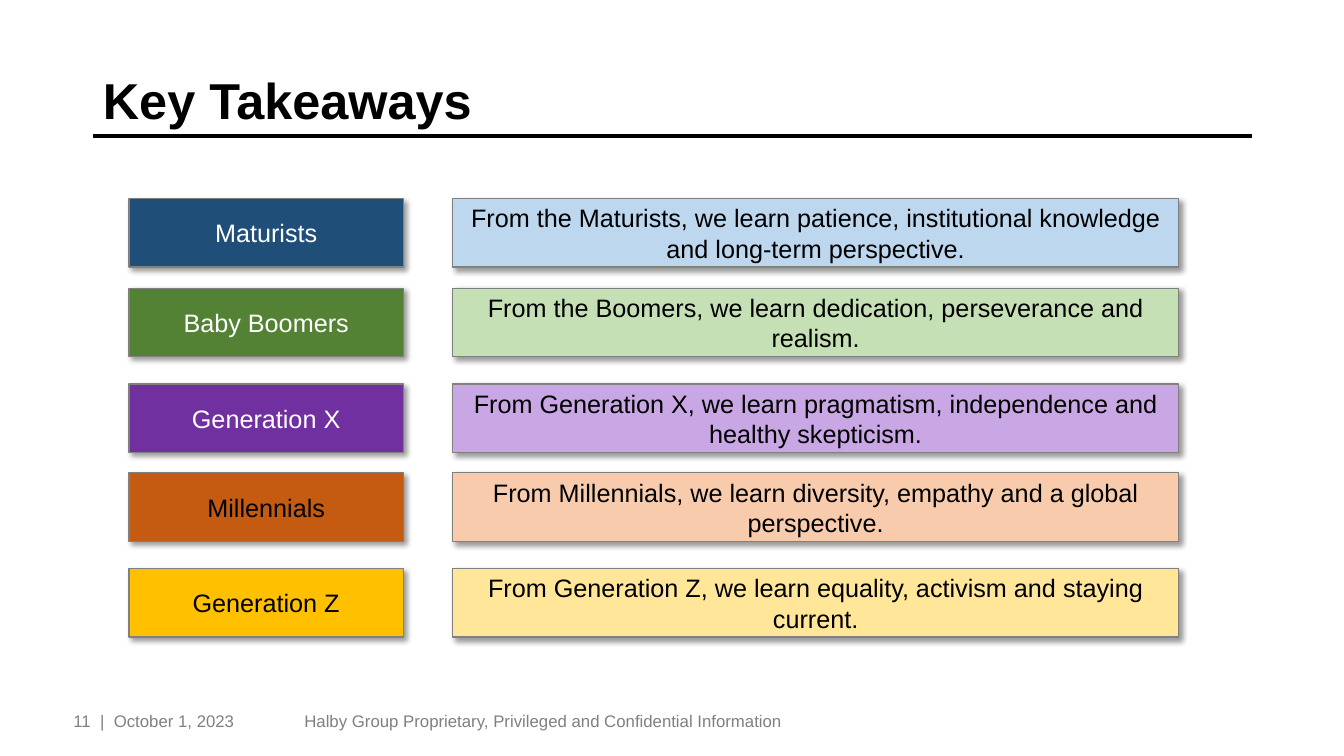
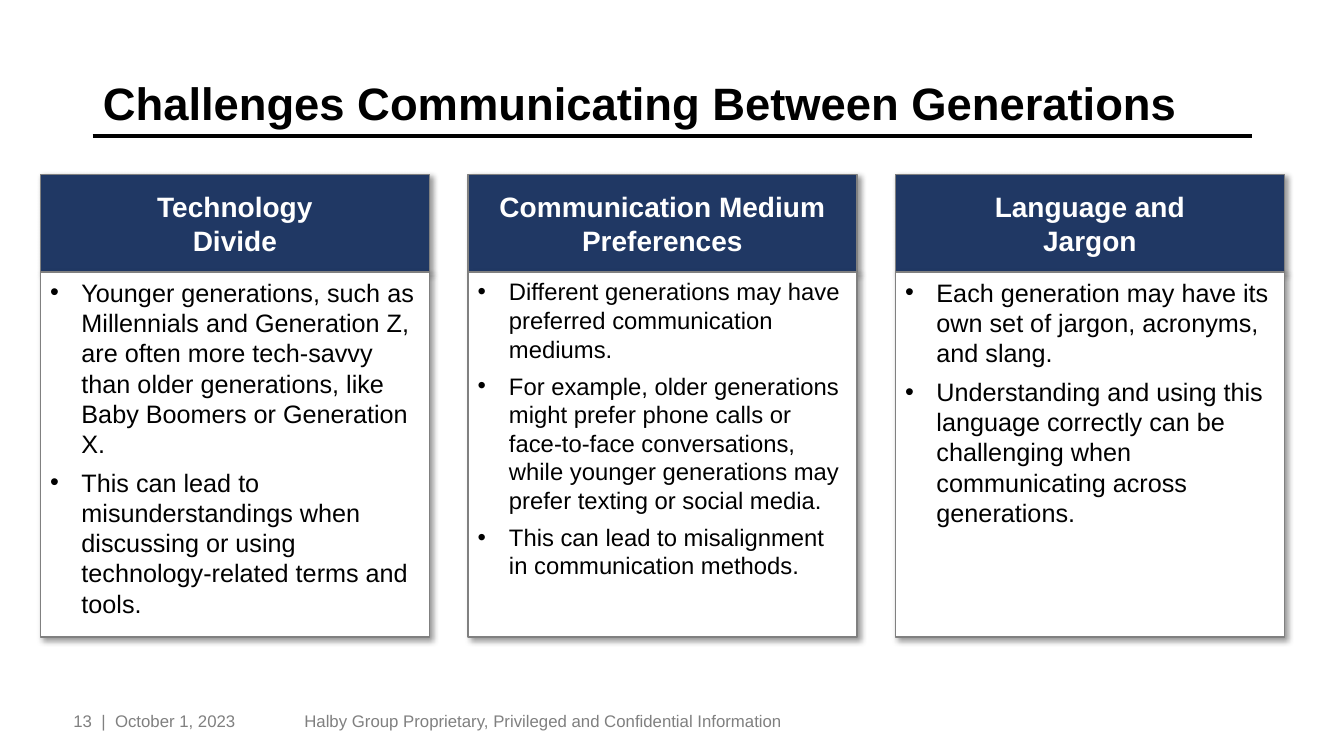
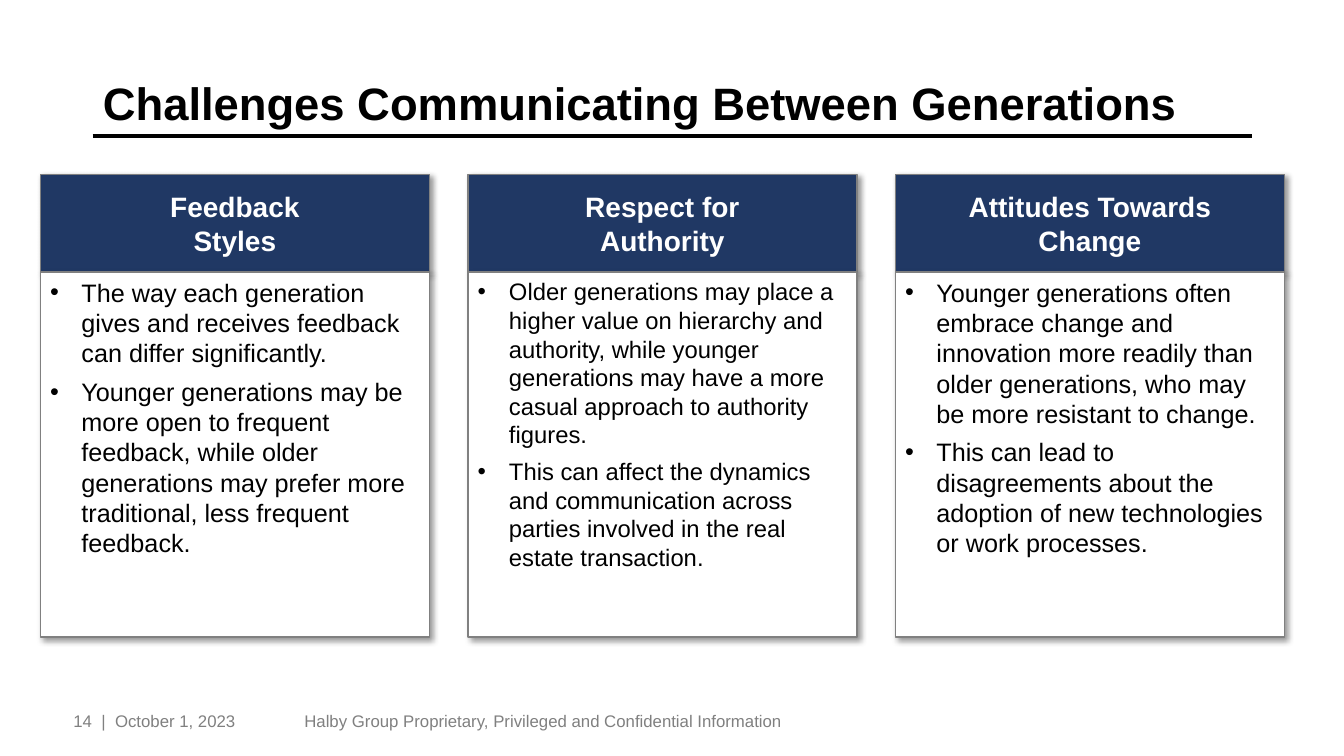
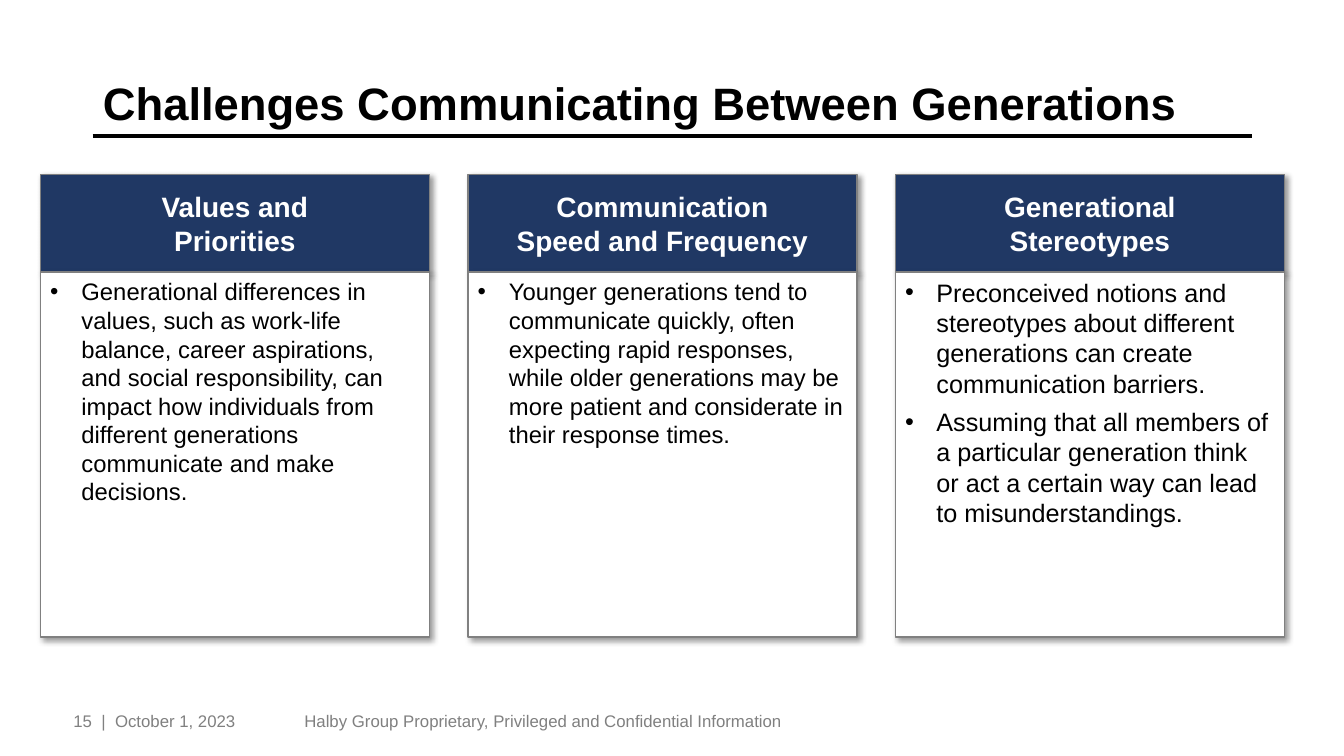
from lxml.etree import SubElement
from pptx import Presentation
from pptx.dml.color import RGBColor
from pptx.enum.shapes import MSO_CONNECTOR, MSO_SHAPE
from pptx.enum.text import MSO_ANCHOR, MSO_AUTO_SIZE, PP_ALIGN
from pptx.oxml.ns import qn
from pptx.util import Pt

PX = 9144  # EMU in one px, 100 px to the inch
FONT = "Arial"
INDENT = 31

BLACK = RGBColor(0x00, 0x00, 0x00)
WHITE = RGBColor(0xFF, 0xFF, 0xFF)
GRAY = RGBColor(0x80, 0x80, 0x80)
NAVY = RGBColor(0x20, 0x38, 0x64)
BLUE = RGBColor(0x1F, 0x4E, 0x79)
SKY = RGBColor(0xBD, 0xD7, 0xEE)
GREEN = RGBColor(0x54, 0x82, 0x35)
MINT = RGBColor(0xC5, 0xE0, 0xB4)
PURPLE = RGBColor(0x70, 0x30, 0xA0)
LILAC = RGBColor(0xC9, 0xA6, 0xE4)
RUST = RGBColor(0xC5, 0x5A, 0x11)
PEACH = RGBColor(0xF8, 0xCB, 0xAD)
GOLD = RGBColor(0xFF, 0xC0, 0x00)
CREAM = RGBColor(0xFF, 0xE6, 0x99)

DATE = "October 1, 2023"
NOTICE = "Halby Group Proprietary, Privileged and Confidential Information"
TOPIC = "Challenges Communicating Between Generations"

# top, name, name fill, name colour, lesson, lesson fill
LESSONS = [
    (197, "Maturists", BLUE, WHITE,
     "From the Maturists, we learn patience, institutional knowledge and "
     "long-term perspective.", SKY),
    (286, "Baby Boomers", GREEN, WHITE,
     "From the Boomers, we learn dedication, perseverance and realism.", MINT),
    (381, "Generation X", PURPLE, WHITE,
     "From Generation X, we learn pragmatism, independence and healthy "
     "skepticism.", LILAC),
    (469, "Millennials", RUST, BLACK,
     "From Millennials, we learn diversity, empathy and a global "
     "perspective.", PEACH),
    (564, "Generation Z", GOLD, BLACK,
     "From Generation Z, we learn equality, activism and staying current.",
     CREAM),
]

# page number, then three cards: heading, text size, points
BOARDS = [
    (13, [
        ("Technology\nDivide", 18, [
            "Younger generations, such as Millennials and Generation Z, are "
            "often more tech-savvy than older generations, like Baby Boomers "
            "or Generation X.",
            "This can lead to misunderstandings when discussing or using "
            "technology-related terms and tools."]),
        ("Communication Medium Preferences", 17, [
            "Different generations may have preferred communication mediums.",
            "For example, older generations might prefer phone calls or "
            "face-to-face conversations, while younger generations may prefer "
            "texting or social media.",
            "This can lead to misalignment in communication methods."]),
        ("Language and\nJargon", 18, [
            "Each generation may have its own set of jargon, acronyms, and "
            "slang.",
            "Understanding and using this language correctly can be "
            "challenging when communicating across generations."]),
    ]),
    (14, [
        ("Feedback\nStyles", 18, [
            "The way each generation gives and receives feedback can differ "
            "significantly.",
            "Younger generations may be more open to frequent feedback, while "
            "older generations may prefer more traditional, less frequent "
            "feedback."]),
        ("Respect for\nAuthority", 17, [
            "Older generations may place a higher value on hierarchy and "
            "authority, while younger generations may have a more casual "
            "approach to authority figures.",
            "This can affect the dynamics and communication across parties "
            "involved in the real estate transaction."]),
        ("Attitudes Towards\nChange", 18, [
            "Younger generations often embrace change and innovation more "
            "readily than older generations, who may be more resistant to "
            "change.",
            "This can lead to disagreements about the adoption of new "
            "technologies or work processes."]),
    ]),
    (15, [
        ("Values and\nPriorities", 17, [
            "Generational differences in values, such as work-life balance, "
            "career aspirations, and social responsibility, can impact how "
            "individuals from different generations communicate and make "
            "decisions."]),
        ("Communication\nSpeed and Frequency", 17, [
            "Younger generations tend to communicate quickly, often expecting "
            "rapid responses, while older generations may be more patient and "
            "considerate in their response times."]),
        ("Generational\nStereotypes", 18, [
            "Preconceived notions and stereotypes about different generations "
            "can create communication barriers.",
            "Assuming that all members of a particular generation think or "
            "act a certain way can lead to misunderstandings."]),
    ]),
]


def scale(*sizes):
    return [size * PX for size in sizes]


def bullet(para):
    props = para._p.get_or_add_pPr()
    props.set("marL", str(INDENT * PX))
    props.set("indent", str(-INDENT * PX))
    SubElement(props, qn("a:buFont"), typeface=FONT)
    SubElement(props, qn("a:buChar"), char="•")


def write(frame, text, size=18, color=BLACK, bold=False, align=PP_ALIGN.LEFT,
          anchor=MSO_ANCHOR.MIDDLE, wrap=True, bullets=False, after=None,
          spacing=None):
    """Fill a text frame, one paragraph for each line of text."""
    frame.word_wrap = wrap
    frame.auto_size = MSO_AUTO_SIZE.NONE
    frame.vertical_anchor = anchor
    frame.text = text
    for para in frame.paragraphs:
        if bullets:
            bullet(para)
        para.alignment = align
        para.line_spacing = spacing
        if after is not None:
            para.space_after = Pt(after)
        for run in para.runs:
            font = run.font
            font.name, font.size, font.bold = FONT, Pt(size), bold
            font.color.rgb = color


def shade(shape):
    """Cast a soft shadow to the lower right."""
    shape.shadow.inherit = False
    effects = shape._element.spPr.find(qn("a:effectLst"))
    outer = SubElement(effects, qn("a:outerShdw"), blurRad=str(Pt(4)),
                       dist=str(Pt(3)), dir="2700000", algn="tl",
                       rotWithShape="0")
    tint = SubElement(outer, qn("a:srgbClr"), val=str(BLACK))
    SubElement(tint, qn("a:alpha"), val="40000")


class Deck:
    def __init__(self):
        self.file = Presentation()
        self.file.slide_width, self.file.slide_height = scale(1333, 750)
        self.slide = None

    def start(self, page, title, size):
        """Open a slide with its title, rule and footer."""
        self.slide = self.file.slides.add_slide(self.file.slide_layouts[5])
        self.label(63, 695, 173, 41, f"{page}  |  {DATE}")
        self.label(292, 695, 532, 41, NOTICE)
        self.rule(92, 135, 1242)
        head = self.slide.shapes.title
        head.left, head.top, head.width, head.height = scale(92, 28, 1150, 106)
        write(head.text_frame, title, size=size, bold=True,
              anchor=MSO_ANCHOR.BOTTOM, spacing=0.9)

    def label(self, x, y, w, h, text):
        box = self.slide.shapes.add_textbox(*scale(x, y, w, h))
        write(box.text_frame, text, size=12, color=GRAY, wrap=False)

    def rule(self, x, y, end):
        line = self.slide.shapes.add_connector(
            MSO_CONNECTOR.STRAIGHT, *scale(x, y, end, y))
        line.line.color.rgb = BLACK
        line.line.width = Pt(3)
        SubElement(line._element.spPr, qn("a:effectLst"))

    def panel(self, x, y, w, h, fill, text, align=PP_ALIGN.CENTER, **style):
        box = self.slide.shapes.add_shape(
            MSO_SHAPE.RECTANGLE, *scale(x, y, w, h))
        box.fill.solid()
        box.fill.fore_color.rgb = fill
        box.line.color.rgb = GRAY
        box.line.width = Pt(1)
        shade(box)
        write(box.text_frame, text, align=align, **style)

    def card(self, x, head, size, points):
        self.panel(x, 173, 386, 97, NAVY, head, size=20, color=WHITE,
                   bold=True)
        self.panel(x, 270, 386, 362, WHITE, "\n".join(points), size=size,
                   align=PP_ALIGN.LEFT, anchor=MSO_ANCHOR.TOP, bullets=True,
                   after=6)


def main():
    deck = Deck()
    deck.start(11, "Key Takeaways", 36)
    for top, name, fill, color, lesson, pale in LESSONS:
        deck.panel(128, top, 272, 68, fill, name, color=color)
        deck.panel(449, top, 720, 68, pale, lesson)
    for page, cards in BOARDS:
        deck.start(page, TOPIC, 32.4)
        for col, card in enumerate(cards):
            deck.card(40 + 424 * col, *card)
    deck.file.save("out.pptx")


if __name__ == "__main__":
    main()
